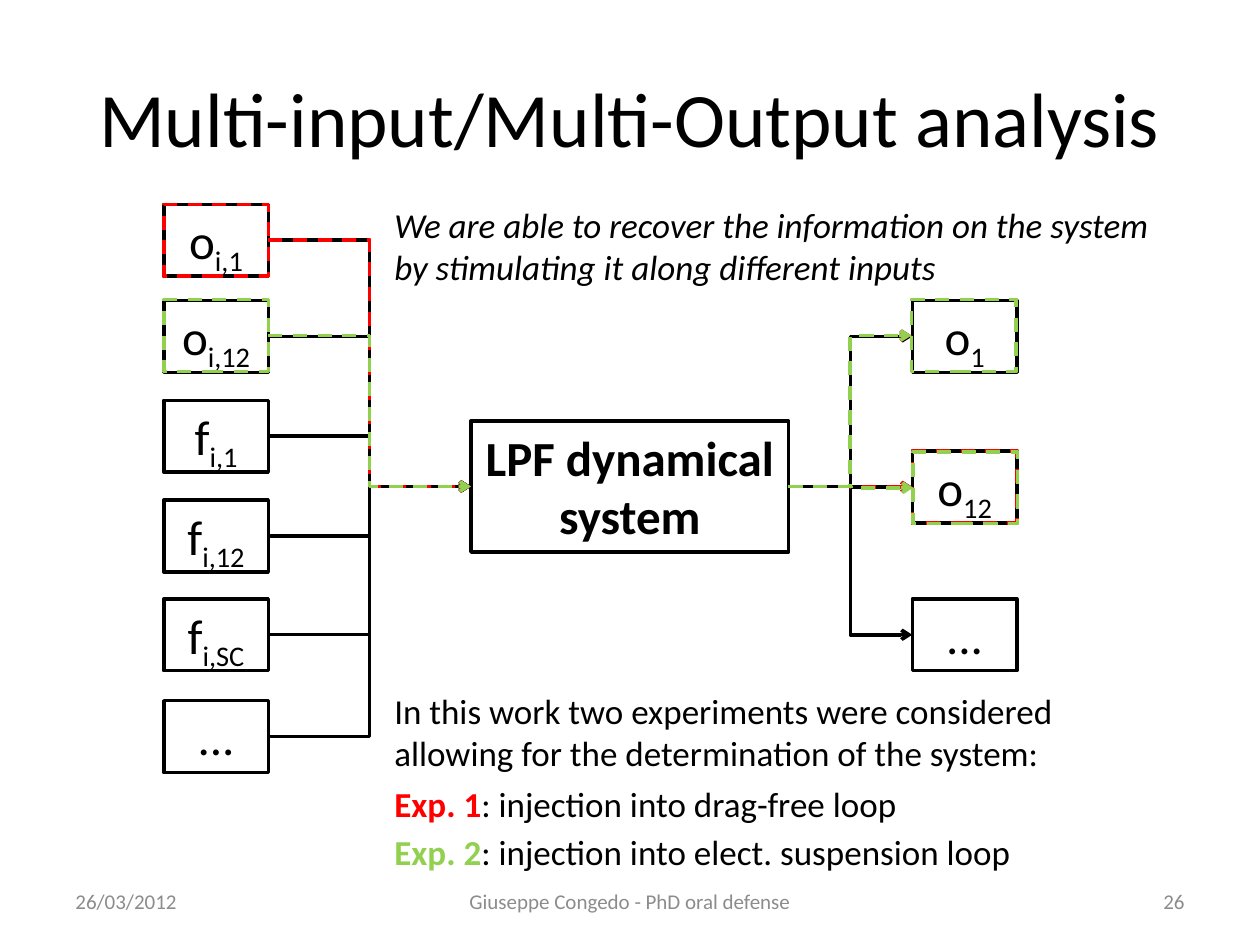
from pptx import Presentation
from pptx.dml.color import RGBColor
from pptx.enum import dml, shapes, text
from pptx.oxml.ns import qn
from pptx.util import Pt

HUES = {"ink": "000000", "red": "FF0000", "green": "92D050", "grey": "8C8C8C"}
CELL = (59.76, 41.04)
LEFT = {"align": text.PP_ALIGN.LEFT}
MID = {"align": text.PP_ALIGN.CENTER}
RIGHT = {"align": text.PP_ALIGN.RIGHT}
SUB = {"sub": True}


def hue(name):
    return RGBColor.from_string(HUES[name])


def put(obj, vals):
    for key, val in vals.items():
        setattr(obj, key, val)


def write(frame, runs, size, align, anchor=text.MSO_ANCHOR.TOP,
          fit=text.MSO_AUTO_SIZE.SHAPE_TO_FIT_TEXT, tint="ink"):
    """Fill a text frame with (words, format) runs."""
    put(frame, {"word_wrap": True, "auto_size": fit, "vertical_anchor": anchor})
    para = frame.paragraphs[0]
    para.alignment = align["align"]
    for words, form in runs:
        run = para.add_run()
        run.text = words
        put(run.font, {"name": "Calibri", "size": Pt(size),
                       "bold": form.get("bold", False),
                       "italic": form.get("italic", False)})
        run.font.color.rgb = hue(form.get("tint", tint))
        if form.get("sub"):
            run.font._element.set("baseline", "-25000")


def stroke(line, tint, dash):
    line.color.rgb = hue(tint)
    line.width = Pt(2)
    if dash:
        line.dash_style = dml.MSO_LINE.DASH


def rect(slide, box, runs=(), tint="ink", dash=False, bold=False):
    item = slide.shapes.add_shape(shapes.MSO_SHAPE.RECTANGLE, *map(Pt, box))
    item.shadow.inherit = False
    item.fill.background()
    stroke(item.line, tint, dash)
    if runs:
        write(item.text_frame, runs, 28, MID)
    return item


def link(slide, start, end, tint="ink", dash=False):
    """Elbow arrow from the right side of one box to the left of another."""
    line = slide.shapes.add_connector(shapes.MSO_CONNECTOR.ELBOW, 0, 0, 0, 0)
    line.begin_connect(start, 3)
    line.end_connect(end, 1)
    stroke(line.line, tint, dash)
    tail = line.line._get_or_add_ln()
    tail.append(tail.makeelement(qn("a:tailEnd"), {"type": "arrow"}))
    props = line._element.spPr
    props.append(props.makeelement(qn("a:effectLst"), {}))


def note(slide, box, runs, size=20, align=LEFT, **form):
    item = slide.shapes.add_textbox(*map(Pt, box))
    write(item.text_frame, runs, size, align, **form)


def head(slide, box):
    title = slide.shapes.title
    put(title, dict(zip(("left", "top", "width", "height"), map(Pt, box))))
    write(title.text_frame, [("Multi-input/Multi-Output analysis", {})], 44, MID,
          text.MSO_ANCHOR.MIDDLE, text.MSO_AUTO_SIZE.NONE)


def foot(slide, box):
    left, top, wide, high = box
    side, mid = 168, 272
    for x, w, words, align in (
            (left, side, "26/03/2012", LEFT),
            (left + (wide - mid) / 2, mid, "Giuseppe Congedo - PhD oral defense", MID),
            (left + wide - side, side, "26", RIGHT)):
        note(slide, (x, top, w, high), [(words, {})], 12, align, tint="grey",
             anchor=text.MSO_ANCHOR.MIDDLE, fit=text.MSO_AUTO_SIZE.NONE)


def stack(slide, left, top, rows):
    """Column of signal boxes: (offset, symbol, subscript)."""
    return [rect(slide, (left, top + gap, *CELL),
                 [(sign, {})] + ([(low, SUB)] if low else []))
            for gap, sign, low in rows]


def chart(slide, box):
    """Block diagram: inputs, system, outputs and both injections."""
    left, top, wide, high = box
    right = left + wide - CELL[0]
    core = rect(slide, (left + 175.5, top + 123.75, 181.5, 75),
                [("LPF dynamical system", {"bold": True})])
    ins = stack(slide, left, top, [
        (0, "o", "i,1"), (55, "o", "i,12"), (112, "f", "i,1"),
        (169, "f", "i,12"), (225.5, "f", "i,SC"), (high - CELL[1], "...", "")])
    outs = stack(slide, right, top, [
        (55, "o", "1"), (141, "o", "12"), (225.5, "...", "")])
    for item in ins:
        link(slide, item, core)
    for item in outs:
        link(slide, core, item)

    # Dashed overlay for each experiment
    for tint, source, shift in (("red", ins[0], 0), ("green", ins[1], 0.5)):
        frames = []
        for item, dx, dy in ((source, 0, -shift), (outs[0], -0.5, -0.5),
                             (outs[1], shift, shift)):
            spot = (item.left.pt + dx, item.top.pt + dy, *CELL)
            frames.append(rect(slide, spot, tint=tint, dash=True))
        link(slide, frames[0], core, tint, True)
        for item in frames[1:]:
            link(slide, core, item, tint, True)


def notes(slide, box):
    left, top, wide, high = box
    tall, low = 55.5, 31.5
    last = top + high - low
    note(slide, (left, top, wide, tall), [
        ("We are able to recover the information on the system by stimulating "
         "it along different inputs", {"italic": True})])
    note(slide, (left, top + 278, wide, tall), [
        ("In this work two experiments were considered allowing for the "
         "determination of the system:", {})])
    for y, name, tint, words in (
            (last - 27.5, "Exp. 1", "red", ": injection into drag-free loop"),
            (last, "Exp. 2", "green", ": injection into elect. suspension loop")):
        note(slide, (left, y, wide, low),
             [(name, {"bold": True, "tint": tint}), (words, {})])


def main():
    deck = Presentation()
    put(deck, {"slide_width": Pt(720), "slide_height": Pt(540)})
    slide = deck.slides.add_slide(deck.slide_layouts[5])
    head(slide, (36, 21.6, 648, 90))
    foot(slide, (36, 500.5, 648, 28.75))
    chart(slide, (93.6, 116.75, 487.5, 324.75))
    notes(slide, (218.25, 112.5, 453.5, 390))
    deck.save("out.pptx")


if __name__ == "__main__":
    main()
